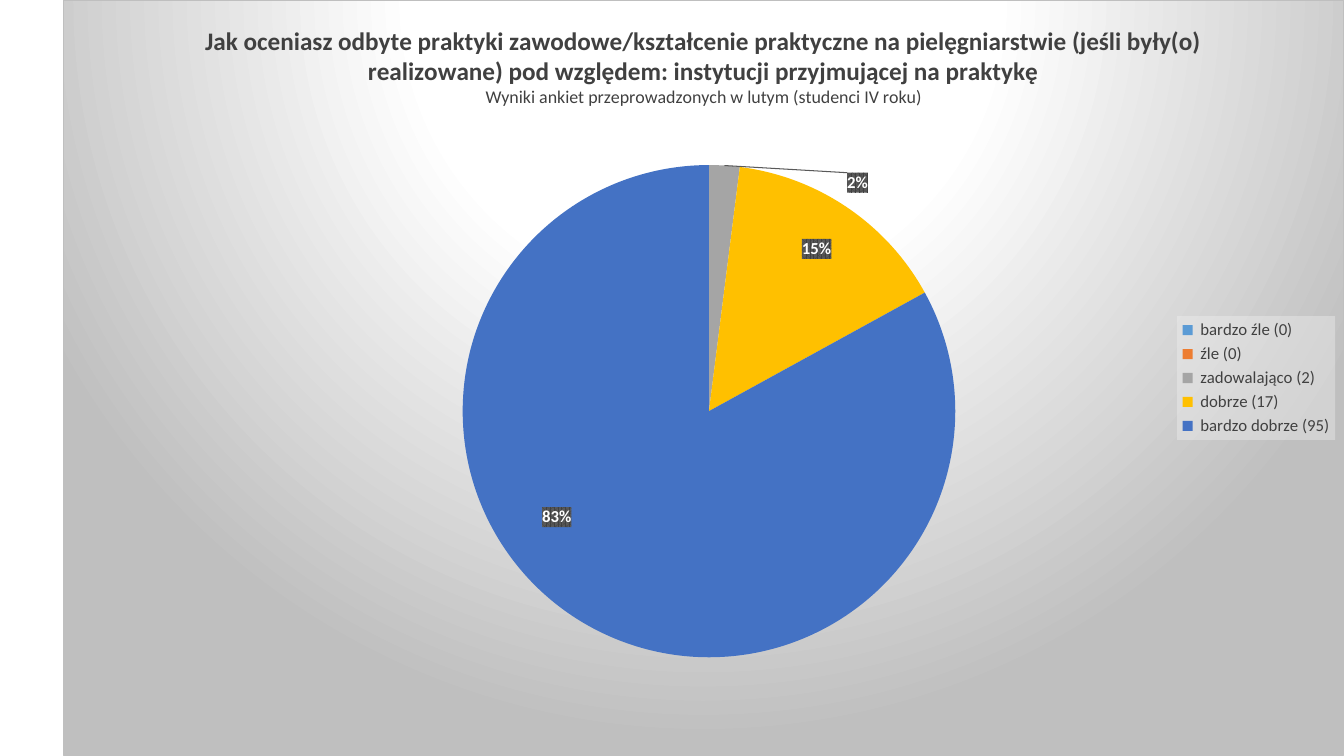
from copy import deepcopy
from pptx import Presentation
from pptx.chart.data import CategoryChartData as Data
from pptx.dml.color import RGBColor as RGB
from pptx.enum.chart import (XL_CHART_TYPE as Kind, XL_LABEL_POSITION as Spot,
                             XL_LEGEND_POSITION as Side)
from pptx.oxml.xmlchemy import OxmlElement as Elem
from pptx.util import Inches, Pt

FONT = "Calibri"
DARK = RGB(0x40, 0x40, 0x40)
BLACK = RGB(0, 0, 0)
WHITE = RGB(0xFF, 0xFF, 0xFF)
GRAY = RGB(0xBF, 0xBF, 0xBF)
PALE = RGB(0xF2, 0xF2, 0xF2)
INK = RGB(0x59, 0x59, 0x59)
BLUE = RGB(0x5B, 0x9B, 0xD5)
ORANGE = RGB(0xED, 0x7D, 0x31)
SILVER = RGB(0xA5, 0xA5, 0xA5)
GOLD = RGB(0xFF, 0xC0, 0x00)
NAVY = RGB(0x44, 0x72, 0xC4)

RATES = [
    (" bardzo źle (0)", 0, BLUE, None),
    (" źle (0)", 0, ORANGE, None),
    (" zadowalająco (2)", 2, SILVER, (0.11, -0.14)),
    (" dobrze (17)", 15, GOLD, (0.03, -0.08)),
    (" bardzo dobrze (95)", 83, NAVY, (-0.07, 0)),
]
HEAD = ("Jak oceniasz odbyte praktyki zawodowe/kształcenie praktyczne na "
        "pielęgniarstwie (jeśli były(o) realizowane) pod względem: "
        "instytucji przyjmującej na praktykę")
NOTE = "Wyniki ankiet przeprowadzonych w lutym (studenci IV roku)"


def node(tag, *kids, **attrs):
    """Return an XML element with the given children and attributes."""
    item = Elem(tag)
    for key, val in attrs.items():
        item.set(key, str(val))
    item.extend(kids)
    return item


def tint(color, *extra):
    """Return a colour element."""
    return node("a:srgbClr", *extra, val=color)


def solid(color, *extra):
    """Return a solid fill element."""
    return node("a:solidFill", tint(color, *extra))


def line(color):
    """Return a thin outline element."""
    return node("a:ln", solid(color), w=Pt(0.75))


def layout(**marks):
    """Return a manual layout element."""
    rows = [node(f"c:{key}", val=val) for key, val in marks.items()]
    return node("c:layout", node("c:manualLayout", *rows))


def style(font, size, color, bold=False):
    """Set the look of a font."""
    font.name, font.size, font.bold = FONT, Pt(size), bold
    font.color.rgb = color


def add_title(chart):
    """Write the heading and its smaller second line."""
    frame = chart.chart_title.text_frame
    frame.text = HEAD
    frame.add_paragraph().text = NOTE
    for para, size, bold in zip(frame.paragraphs, (18, 12.8), (True, False)):
        style(para.runs[0].font, size, DARK, bold)
    chart.chart_title.include_in_layout = False


def add_legend(chart):
    """Place the legend on the right over a pale veil."""
    chart.has_legend = True
    legend = chart.legend
    legend.position = Side.RIGHT
    legend.include_in_layout = False
    style(legend.font, 12, DARK)
    veil = node("c:spPr", solid(PALE, node("a:alpha", val=39000)))
    chart.element.xpath("c:chart/c:legend/c:overlay")[0].addnext(veil)


def add_labels(series):
    """Label the slices in percent, hide empty ones and shift the rest."""
    labels = series.data_labels
    labels.number_format, labels.number_format_is_linked = "0%", False
    labels.show_percentage, labels.show_value = True, False
    labels.position = Spot.CENTER
    style(labels.font, 12, WHITE, True)

    root = series._element.xpath("c:dLbls")[0]
    weave = node("a:pattFill", node("a:fgClr", tint(DARK)),
                 node("a:bgClr", tint(INK)), prst="pct75")
    root.xpath("c:txPr")[0].addprevious(node("c:spPr", weave))
    look = root.xpath("*[not(self::c:showLeaderLines)]")
    root.append(node("c:leaderLines", node("c:spPr", line(INK))))

    for i, (_, _, _, shift) in enumerate(RATES):
        label = node("c:dLbl", node("c:idx", val=i))
        if shift:
            label.append(layout(x=shift[0], y=shift[1]))
            label.extend(deepcopy(look))
        else:
            label.append(node("c:delete", val=1))
        root.insert(i, label)


def set_back(chart):
    """Give the chart its radial backdrop and border."""
    stops = [node("a:gs", tint(color), pos=share * 1000)
             for share, color in ((0, WHITE), (39, WHITE), (100, GRAY))]
    focus = node("a:fillToRect", l=50000, t=-80000, r=50000, b=180000)
    glow = node("a:gradFill", node("a:gsLst", *stops),
                node("a:path", focus, path="circle"))
    back = node("c:spPr", glow, line(GRAY))
    chart.element.xpath("c:chart")[0].addnext(back)


def set_plot(chart):
    """Fix the place of the pie inside the chart."""
    area = chart.element.xpath("c:chart/c:plotArea")[0]
    for old in area.xpath("c:layout"):
        area.remove(old)
    area.insert(0, layout(layoutTarget="inner", xMode="edge", yMode="edge",
                          x=0.312, y=0.218, w=0.385, h=0.652))


def add_pie(slide, left, top, width, height):
    """Draw the pie of ratings in the given box."""
    data = Data()
    data.categories = [name for name, *_ in RATES]
    data.add_series("Series 1", [rate for _, rate, *_ in RATES])
    chart = slide.shapes.add_chart(
        Kind.PIE, left, top, width, height, data).chart
    style(chart.font, 10, BLACK)
    plot = chart.plots[0]
    plot.vary_by_categories = True
    series = plot.series[0]
    for i, (_, _, hue, _) in enumerate(RATES):
        fill = series.points[i].format.fill
        fill.solid()
        fill.fore_color.rgb = hue
    add_title(chart)
    add_legend(chart)
    add_labels(series)
    set_back(chart)
    set_plot(chart)


def main():
    """Build and save the slide."""
    deck = Presentation()
    deck.slide_width, deck.slide_height = Inches(13.33), Inches(7.5)
    slide = deck.slides.add_slide(deck.slide_layouts[6])
    add_pie(slide, Inches(0.62), Inches(0), Inches(12.71), Inches(7.5))
    deck.save("out.pptx")


if __name__ == "__main__":
    main()
